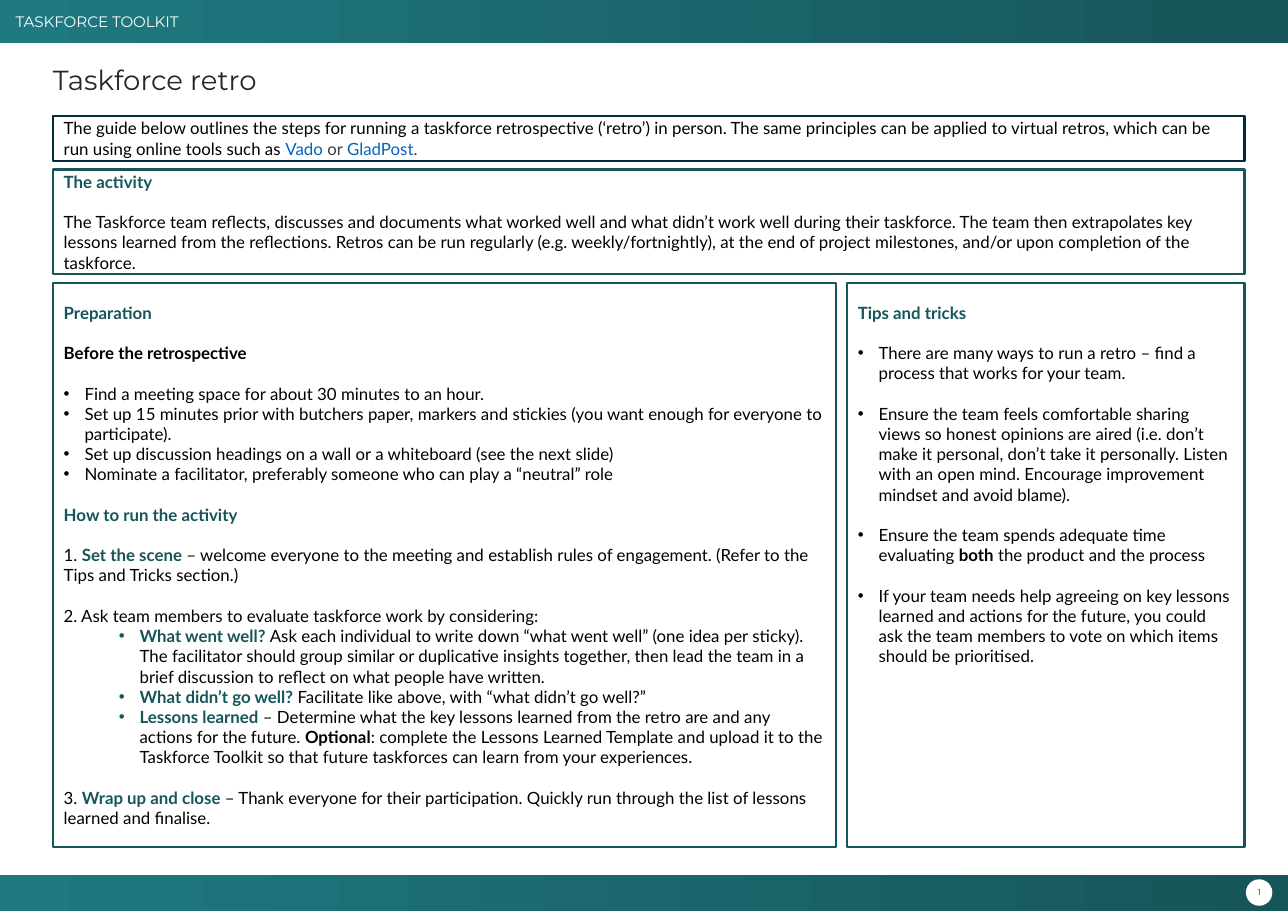
import pptx
import pptx.dml.color
import pptx.enum.shapes
import pptx.enum.text
import pptx.util
from dataclasses import dataclass
from lxml import etree

Cm, Pt = pptx.util.Cm, pptx.util.Pt
Shape = pptx.enum.shapes.MSO_SHAPE
Align = pptx.enum.text.PP_ALIGN
Anchor = pptx.enum.text.MSO_ANCHOR
NS = "{http://schemas.openxmlformats.org/drawingml/2006/main}"


@dataclass(frozen=True)
class Theme:
    """Hold the colours, fonts and type sizes of the slide."""
    teal: str = "16555A"
    light: str = "1F7980"
    navy: str = "032940"
    link: str = "0563C1"
    grey: str = "404040"
    ink: str = "262626"
    slate: str = "222A35"
    black: str = "000000"
    white: str = "FFFFFF"
    head: str = "Montserrat"
    body: str = "Lato"
    title: float = 18
    text: float = 11
    band: float = 9.9
    page: float = 5.7
    gap: float = 13.2


THEME = Theme()
STYLES = {
    "body": (THEME.black, False),
    "bold": (THEME.black, True),
    "lead": (THEME.teal, True),
    "link": (THEME.link, False),
    "soft": (THEME.grey, False),
}
INDENTS = {"bullet": 0.48, "sub": 1.75}

INTRO = [("plain", 0, [
    ("The guide below outlines the steps for running a taskforce retrospective (‘retro’) in person. "
     "The same principles can be applied to virtual retros, which can be run using online tools such as ", "body"),
    ("Vado", "link"), (" or ", "soft"), ("GladPost", "link"), (".", "soft")])]

ACTION = [
    ("plain", 0, [("The activity", "lead")]),
    ("plain", 1, [(
        "The Taskforce team reflects, discusses and documents what worked well and what didn’t work well "
        "during their taskforce. The team then extrapolates key lessons learned from the reflections. "
        "Retros can be run regularly (e.g. weekly/fortnightly), at the end of project milestones, "
        "and/or upon completion of the taskforce.", "body")]),
]

STEPS = [
    ("plain", 0, [("Preparation", "lead")]),
    ("plain", 1, [("Before the retrospective", "bold")]),
    ("bullet", 1, [("Find a meeting space for about 30 minutes to an hour.", "body")]),
    ("bullet", 0, [("Set up 15 minutes prior with butchers paper, markers and stickies "
                    "(you want enough for everyone to participate).", "body")]),
    ("bullet", 0, [("Set up discussion headings on a wall or a whiteboard (see the next slide)", "body")]),
    ("bullet", 0, [("Nominate a facilitator, preferably someone who can play a “neutral” role", "body")]),
    ("plain", 1, [("How to run the activity", "lead")]),
    ("plain", 1, [("1. ", "body"), ("Set the scene ", "lead"),
                  ("– welcome everyone to the meeting and establish rules of engagement. "
                   "(Refer to the Tips and Tricks section.)", "body")]),
    ("plain", 1, [("2. Ask team members to evaluate taskforce work by considering:", "body")]),
    ("sub", 0, [("What went well? ", "lead"),
                ("Ask each individual to write down “what went well” (one idea per sticky). "
                 "The facilitator should group similar or duplicative insights together, then lead "
                 "the team in a brief discussion to reflect on what people have written.", "body")]),
    ("sub", 0, [("What didn’t go well?", "lead"),
                (" Facilitate like above, with “what didn’t go well?”", "body")]),
    ("sub", 0, [("Lessons learned ", "lead"),
                ("– Determine what the key lessons learned from the retro are and any actions "
                 "for the future. ", "body"),
                ("Optional", "bold"),
                (": complete the Lessons Learned Template and upload it to the Taskforce Toolkit "
                 "so that future taskforces can learn from your experiences.", "body")]),
    ("plain", 1, [("3. ", "body"), ("Wrap up and close ", "lead"),
                  ("– Thank everyone for their participation. Quickly run through the list of "
                   "lessons learned and finalise.", "body")]),
]

TIPS = [
    ("plain", 0, [("Tips and tricks", "lead")]),
    ("bullet", 1, [("There are many ways to run a retro – find a process that works for your team.", "body")]),
    ("bullet", 1, [("Ensure the team feels comfortable sharing views so honest opinions are aired "
                    "(i.e. don’t make it personal, don’t take it personally. Listen with an open mind. "
                    "Encourage improvement mindset and avoid blame).", "body")]),
    ("bullet", 1, [("Ensure the team spends adequate time evaluating ", "body"), ("both", "bold"),
                   (" the product and the process", "body")]),
    ("bullet", 1, [("If your team needs help agreeing on key lessons learned and actions for the future, "
                    "you could ask the team members to vote on which items should be prioritised.", "body")]),
]


def shade(code):
    """Turn a hex code into a colour."""
    return pptx.dml.color.RGBColor.from_string(code)


def put(item, **values):
    """Set each named value on an item."""
    for name, value in values.items():
        setattr(item, name, value)


def frame(shape, left=0, top=0, right=0, anchor=Anchor.MIDDLE, wrap=True):
    """Set the insets and anchor of a text frame and return it."""
    put(shape.text_frame, margin_left=Cm(left), margin_top=Cm(top), margin_right=Cm(right),
        margin_bottom=0, vertical_anchor=anchor, word_wrap=wrap,
        auto_size=pptx.enum.text.MSO_AUTO_SIZE.NONE)
    return shape.text_frame


def write(para, text, face, size, code, bold=False):
    """Add one styled run to a paragraph."""
    run = para.add_run()
    run.text = text
    put(run.font, name=face, size=Pt(size), bold=bold)
    run.font.color.rgb = shade(code)


def mark(para, indent):
    """Give a paragraph a hanging bullet."""
    props = para._p.get_or_add_pPr()
    props.set("marL", str(Cm(indent)))
    props.set("indent", str(-Cm(INDENTS["bullet"])))
    etree.SubElement(props, NS + "buFont").set("typeface", "Arial")
    etree.SubElement(props, NS + "buChar").set("char", "•")


def draw(slide, kind, box, fill=None, line=None):
    """Add a flat shape with an optional fill and outline."""
    shape = slide.shapes.add_shape(kind, *map(Cm, box))
    shape.shadow.inherit = False
    if fill:
        shape.fill.solid()
        shape.fill.fore_color.rgb = shade(fill)
    else:
        shape.fill.background()
    if line:
        shape.line.color.rgb = shade(line)
        shape.line.width = Pt(1.5)
    else:
        shape.line.fill.background()
    return shape


def band(slide, top, height):
    """Add a full-width gradient band."""
    shape = draw(slide, Shape.RECTANGLE, (0, top, 29.7, height))
    shape.fill.gradient()
    shape.fill.gradient_angle = 0
    for stop, code in zip(shape.fill.gradient_stops, (THEME.light, THEME.teal)):
        stop.color.rgb = shade(code)
    return shape


def panel(slide, box, paras, line=THEME.teal, fill=None, top=0, anchor=Anchor.MIDDLE):
    """Add an outlined box of styled paragraphs."""
    text = frame(draw(slide, Shape.RECTANGLE, box, fill, line), 0.25, top, 0.25, anchor)
    for index, (kind, gap, runs) in enumerate(paras):
        para = text.add_paragraph() if index else text.paragraphs[0]
        if kind in INDENTS:
            mark(para, INDENTS[kind])
        put(para, alignment=Align.LEFT, space_before=Pt(gap * THEME.gap))
        for words, style in runs:
            write(para, words, THEME.body, THEME.text, *STYLES[style])


def label(text, words, size, code, align=Align.LEFT):
    """Write a single line in the heading font."""
    para = text.paragraphs[0]
    para.alignment = align
    write(para, words, THEME.head, size, code)
    return para


def main():
    """Build the slide and save it."""
    deck = pptx.Presentation()
    put(deck, slide_width=Cm(29.7), slide_height=Cm(21))
    slide = deck.slides.add_slide(deck.slide_layouts[5])
    title = slide.shapes.title
    put(title, left=Cm(1.22), top=Cm(1.37), width=Cm(19.84), height=Cm(1.1))
    para = label(frame(title, anchor=Anchor.TOP), "Taskforce retro", THEME.title, THEME.ink)
    para.line_spacing = 1.1

    label(frame(band(slide, 0, 0.99), 0.36), "TASKFORCE TOOLKIT", THEME.band, THEME.white)
    band(slide, 20.17, 0.83)
    badge = draw(slide, Shape.OVAL, (28.73, 20.27, 0.61, 0.61), THEME.white)
    label(frame(badge, wrap=False), "1", THEME.page, THEME.slate, Align.CENTER)

    tall = {"top": 0.44, "anchor": Anchor.TOP}
    panel(slide, (19.53, 6.53, 9.17, 13), TIPS, **tall)
    panel(slide, (1.22, 6.53, 18.06, 13), STEPS, **tall)
    panel(slide, (1.22, 3.91, 27.48, 2.41), ACTION)
    panel(slide, (1.22, 2.67, 27.48, 1.04), INTRO, THEME.navy, THEME.white)
    deck.save("out.pptx")


if __name__ == "__main__":
    main()
